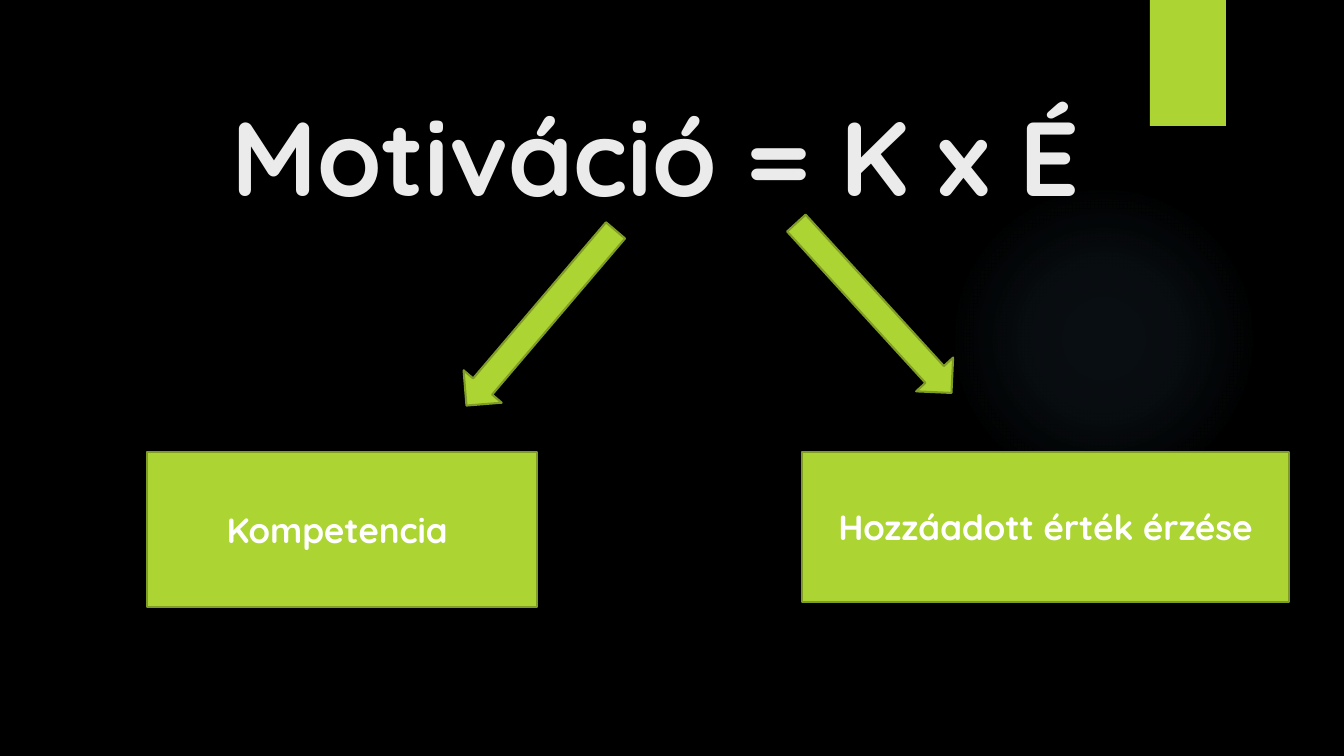
"""Build the motivation formula slide."""
import pptx
import pptx.dml.color
import pptx.enum.shapes
import pptx.enum.text
import pptx.oxml
import pptx.oxml.ns
import pptx.util

SCALE = 914400 / 100.8
COLORS = {"back": "000000", "lime": "ACD433", "edge": "7F9D26",
          "title": "EBEBEB", "label": "FFFFFF", "glow": "7AC4F0"}
GLOW_STOPS = [(0, 7), (36, 6), (69, 0)]
TITLE = {"name": "Quicksand", "size": pptx.util.Pt(75), "bold": True}
LABEL = {"name": "Quicksand", "size": pptx.util.Pt(25), "bold": True}
SHAPE = pptx.enum.shapes.MSO_SHAPE
ALIGN = pptx.enum.text.PP_ALIGN
ANCHOR = pptx.enum.text.MSO_ANCHOR


def px(*values):
    return [pptx.util.Emu(round(v * SCALE)) for v in values]


def rgb(name):
    return pptx.dml.color.RGBColor.from_string(COLORS[name])


def write(sp, text, formats, color, align, anchor):
    tf = sp.text_frame
    tf.word_wrap = True
    tf.auto_size = pptx.enum.text.MSO_AUTO_SIZE.NONE
    tf.vertical_anchor = anchor
    p = tf.paragraphs[0]
    p.alignment = align
    r = p.add_run()
    r.text = text
    for key, value in formats.items():
        setattr(r.font, key, value)
    r.font.color.rgb = rgb(color)


def add_title(slide, text, box):
    sp = slide.shapes.title
    sp.left, sp.top, sp.width, sp.height = px(*box)
    write(sp, text, TITLE, "title", ALIGN.LEFT, ANCHOR.TOP)


def add_block(slide, kind, box, edge=True, rotation=0):
    sp = slide.shapes.add_shape(kind, *px(*box))
    sp.shadow.inherit = False
    sp.rotation = rotation
    sp.fill.solid()
    sp.fill.fore_color.rgb = rgb("lime")
    if edge:
        sp.line.color.rgb = rgb("edge")
        sp.line.width = pptx.util.Pt(1.5)
    else:
        sp.line.fill.background()
    return sp


def add_glow(slide, box):
    sp = slide.shapes.add_shape(SHAPE.OVAL, *px(*box))
    sp.shadow.inherit = False
    sp.line.fill.background()
    sp.fill.background()
    stops = "".join(
        f'<a:gs pos="{pos * 1000}"><a:srgbClr val="{COLORS["glow"]}">'
        f'<a:alpha val="{alpha * 1000}"/></a:srgbClr></a:gs>'
        for pos, alpha in GLOW_STOPS)
    grad = pptx.oxml.parse_xml(
        f'<a:gradFill {pptx.oxml.ns.nsdecls("a")}><a:gsLst>{stops}</a:gsLst>'
        '<a:path path="circle"><a:fillToRect l="50000" t="50000" r="50000" '
        'b="50000"/></a:path></a:gradFill>')
    props = sp.element.spPr
    props.replace(props.find(pptx.oxml.ns.qn("a:noFill")), grad)


def main():
    prs = pptx.Presentation()
    prs.slide_width, prs.slide_height = px(1344, 756)
    slide = prs.slides.add_slide(prs.slide_layouts[5])
    slide.background.fill.solid()
    slide.background.fill.fore_color.rgb = rgb("back")

    add_glow(slide, (949, 184, 310, 310))
    add_block(slide, SHAPE.RECTANGLE, (1150, 0, 76, 126), edge=False)
    add_title(slide, "Motiváció = K x É", (221, 86, 1022, 154))
    for left, top, rotation in [(516, 203, 40.4), (849, 193, 317.6)]:
        add_block(slide, SHAPE.DOWN_ARROW, (left, top, 50, 230), rotation=rotation)
    for text, left, width, height in [("Kompetencia ", 147, 390, 155),
                                      ("Hozzáadott érték érzése", 802, 487, 150)]:
        sp = add_block(slide, SHAPE.RECTANGLE, (left, 452, width, height))
        write(sp, text, LABEL, "label", ALIGN.CENTER, ANCHOR.MIDDLE)

    prs.save("out.pptx")


if __name__ == "__main__":
    main()
